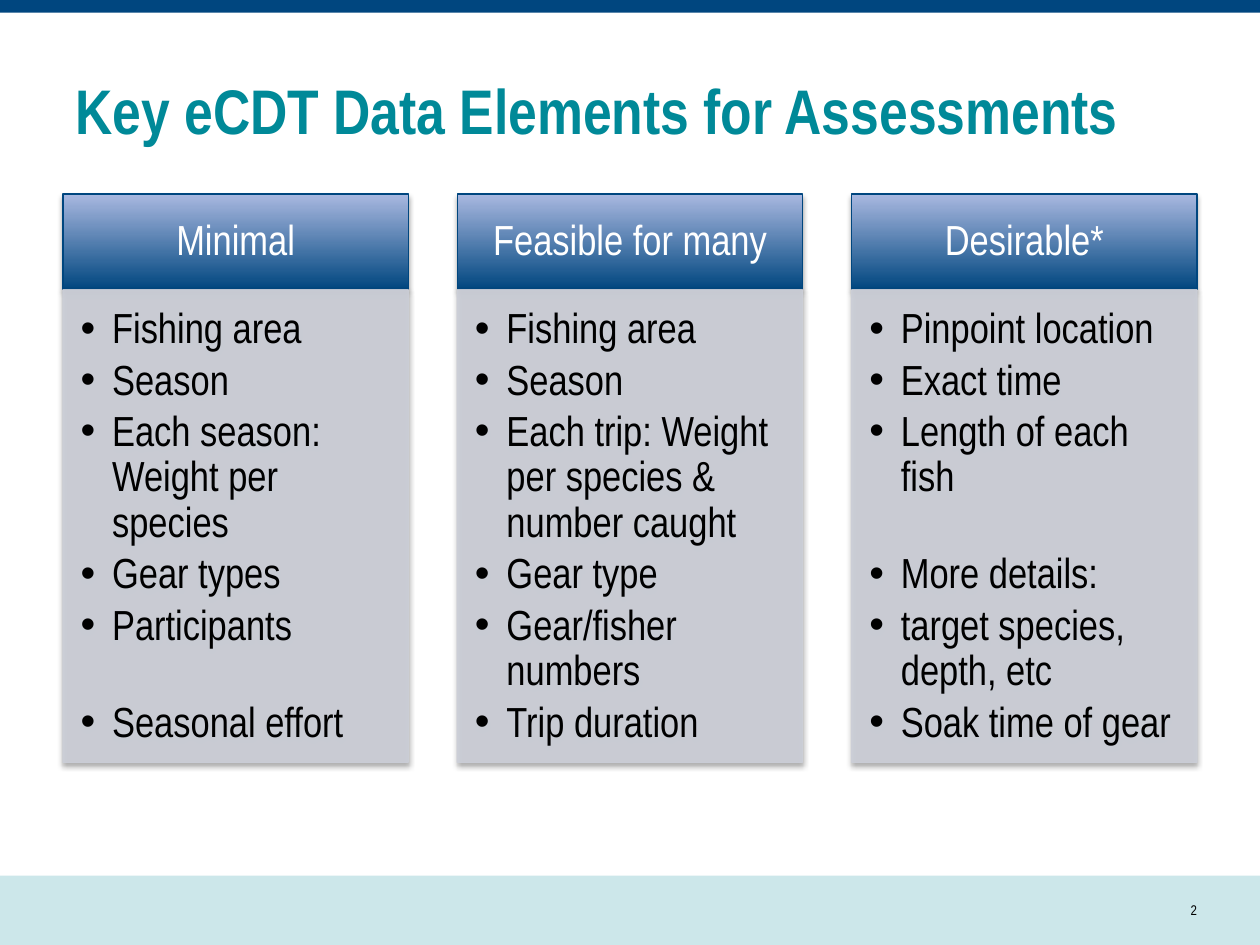
from dataclasses import dataclass

from lxml import etree
from pptx import Presentation
from pptx.dml.color import RGBColor
from pptx.enum import shapes, text
from pptx.oxml import ns
from pptx.util import Inches, Pt


@dataclass(frozen=True)
class Theme:
    font: str = "Arial Narrow"
    navy: str = "00467F"
    periwinkle: str = "A9B8E0"
    teal: str = "008998"
    pale_teal: str = "CCE7EA"
    grey: str = "CCCFD8"
    white: str = "FFFFFF"
    black: str = "000000"
    title_size: int = 36
    body_size: int = 24
    number_size: int = 8


@dataclass(frozen=True)
class Column:
    heading: str
    items: tuple[str, ...]
    gap_after: str = ""  # item followed by one empty line's height


THEME = Theme()
MARGIN, CONTENT_WIDTH = 0.5, 9
COLUMN_WIDTH = 2.74
HEAD_TOP, HEAD_HEIGHT, BODY_HEIGHT = 1.54, 0.76, 3.75
ITEM_SPACE, ITEM_GAP = 3.5, 29.5

COLUMNS = (
    Column("Minimal",
           ("Fishing area", "Season", "Each season: Weight per species",
            "Gear types", "Participants", "Seasonal effort"),
           gap_after="Participants"),
    Column("Feasible for many",
           ("Fishing area", "Season",
            "Each trip: Weight per species & number caught",
            "Gear type", "Gear/fisher numbers", "Trip duration")),
    Column("Desirable*",
           ("Pinpoint location", "Exact time", "Length of each fish",
            "More details:", "target species, depth, etc",
            "Soak time of gear"),
           gap_after="Length of each fish"),
)


def rgb(color: str) -> RGBColor:
    return RGBColor.from_string(color)


def add_rect(slide, left: float, top: float, width: float, height: float):
    sp = slide.shapes.add_shape(
        shapes.MSO_SHAPE.RECTANGLE,
        Inches(left), Inches(top), Inches(width), Inches(height))
    sp.shadow.inherit = False
    return sp


def add_band(slide, top: float, height: float, color: str) -> None:
    sp = add_rect(slide, 0, top, 10, height)
    sp.fill.solid()
    sp.fill.fore_color.rgb = rgb(color)
    sp.line.fill.background()


def add_box(slide, left: float, top: float, width: float, height: float):
    return slide.shapes.add_textbox(
        Inches(left), Inches(top), Inches(width), Inches(height))


def set_frame(sp, anchor, insets: tuple[float, float, float, float]):
    """Prepare the text frame; insets run left, top, right, bottom."""
    tf = sp.text_frame
    tf.word_wrap = True
    tf.vertical_anchor = anchor
    (tf.margin_left, tf.margin_top,
     tf.margin_right, tf.margin_bottom) = map(Inches, insets)
    return tf


def add_run(p, words: str, size: int, color: str, bold: bool = False) -> None:
    r = p.add_run()
    r.text = words
    r.font.name = THEME.font
    r.font.size = Pt(size)
    r.font.bold = bold
    r.font.color.rgb = rgb(color)


def add_alpha(color_parent, percent: int) -> None:
    color = color_parent.find(".//" + ns.qn("a:srgbClr"))
    etree.SubElement(color, ns.qn("a:alpha"), val=str(percent * 1000))


def add_soft_shadow(sp) -> None:
    effects = sp._element.spPr.find(ns.qn("a:effectLst"))
    shadow = etree.SubElement(
        effects, ns.qn("a:outerShdw"), blurRad=str(Pt(3.1)),
        dist=str(Pt(1.8)), dir="5400000", rotWithShape="0")
    etree.SubElement(shadow, ns.qn("a:srgbClr"), val=THEME.black)
    add_alpha(shadow, 35)


def add_bullet(p) -> None:
    pPr = p._p.get_or_add_pPr()
    pPr.set("marL", str(Inches(0.25)))
    pPr.set("indent", str(-Inches(0.25)))
    etree.SubElement(pPr, ns.qn("a:buFont"), typeface="Arial")
    etree.SubElement(pPr, ns.qn("a:buChar"), char="•")


def add_heading(slide, left: float, heading: str) -> None:
    sp = add_rect(slide, left, HEAD_TOP, COLUMN_WIDTH, HEAD_HEIGHT)
    sp.fill.gradient()
    sp.fill.gradient_angle = 90
    for stop, color in zip(sp.fill.gradient_stops,
                           (THEME.navy, THEME.periwinkle)):
        stop.color.rgb = rgb(color)
    sp.line.color.rgb = rgb(THEME.navy)
    sp.line.width = Pt(0.75)
    add_soft_shadow(sp)
    tf = set_frame(sp, text.MSO_ANCHOR.MIDDLE, (0.19, 0.11, 0.19, 0.11))
    p = tf.paragraphs[0]
    p.alignment = text.PP_ALIGN.CENTER
    p.line_spacing = 0.9
    add_run(p, heading, THEME.body_size, THEME.white)


def add_items(slide, left: float, column: Column) -> None:
    sp = add_rect(slide, left, HEAD_TOP + HEAD_HEIGHT,
                  COLUMN_WIDTH, BODY_HEIGHT)
    sp.fill.solid()
    sp.fill.fore_color.rgb = rgb(THEME.grey)
    sp.line.color.rgb = rgb(THEME.grey)
    sp.line.width = Pt(0.75)
    spPr = sp._element.spPr
    for tag in ("a:solidFill", "a:ln"):
        add_alpha(spPr.find(ns.qn(tag)), 90)
    add_soft_shadow(sp)
    tf = set_frame(sp, text.MSO_ANCHOR.TOP, (0.14, 0.14, 0.19, 0.21))
    for i, item in enumerate(column.items):
        p = tf.add_paragraph() if i else tf.paragraphs[0]
        add_bullet(p)
        p.level = 1
        p.alignment = text.PP_ALIGN.LEFT
        p.line_spacing = 0.9
        p.space_after = Pt(ITEM_GAP if item == column.gap_after
                           else ITEM_SPACE)
        add_run(p, item, THEME.body_size, THEME.black)


def add_title(slide, title: str) -> None:
    sp = add_box(slide, MARGIN, 0.5, CONTENT_WIDTH, 0.74)
    tf = set_frame(sp, text.MSO_ANCHOR.MIDDLE, (0.1, 0.05, 0.1, 0.05))
    add_run(tf.paragraphs[0], title, THEME.title_size, THEME.teal, bold=True)


def add_page_number(slide, number: str) -> None:
    sp = add_box(slide, 2.5, 6.95, 7, 0.55)
    tf = set_frame(sp, text.MSO_ANCHOR.MIDDLE, (0, 0.05, 0, 0.05))
    p = tf.paragraphs[0]
    p.alignment = text.PP_ALIGN.RIGHT
    add_run(p, number, THEME.number_size, THEME.black)


def main() -> None:
    prs = Presentation()
    prs.slide_width, prs.slide_height = Inches(10), Inches(7.5)
    slide = prs.slides.add_slide(prs.slide_layouts[6])
    add_band(slide, 6.95, 0.55, THEME.pale_teal)
    add_band(slide, 0, 0.1, THEME.navy)
    add_title(slide, "Key eCDT Data Elements for Assessments")
    pitch = (CONTENT_WIDTH - COLUMN_WIDTH) / (len(COLUMNS) - 1)
    for i, column in enumerate(COLUMNS):
        left = MARGIN + i * pitch
        add_heading(slide, left, column.heading)
        add_items(slide, left, column)
    add_page_number(slide, "2")
    prs.save("out.pptx")


if __name__ == "__main__":
    main()
